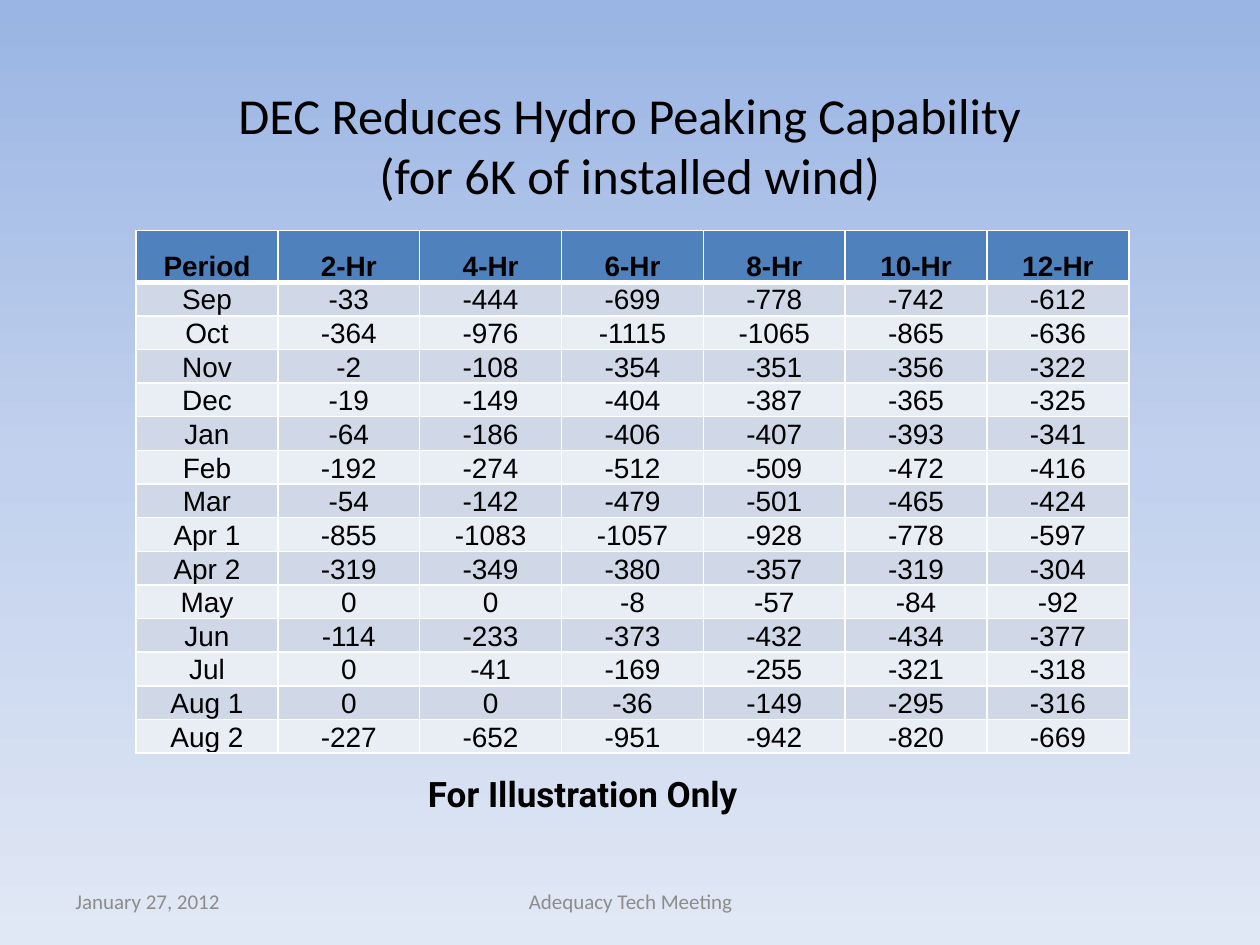
from copy import deepcopy

from lxml import etree
from pptx import Presentation
from pptx.dml.color import RGBColor
from pptx.enum.text import MSO_ANCHOR, PP_ALIGN
from pptx.oxml.ns import qn
from pptx.util import Inches, Pt

LEFT, CENTER = PP_ALIGN.LEFT, PP_ALIGN.CENTER
TOP, MIDDLE, BOTTOM = MSO_ANCHOR.TOP, MSO_ANCHOR.MIDDLE, MSO_ANCHOR.BOTTOM

BLACK = RGBColor(0x00, 0x00, 0x00)
WHITE = RGBColor(0xFF, 0xFF, 0xFF)
FOOTER_GRAY = RGBColor(0x8C, 0x8C, 0x8C)
HEADER_BLUE = RGBColor(0x4F, 0x81, 0xBD)
BANDS = (RGBColor(0xD0, 0xD8, 0xE8), RGBColor(0xE9, 0xED, 0xF4))
SKY = (RGBColor(0x9A, 0xB5, 0xE4), RGBColor(0xC2, 0xD1, 0xED), RGBColor(0xE1, 0xE8, 0xF5))

HEADER_HEIGHT = 0.41
HEADINGS = ("Period", "2-Hr", "4-Hr", "6-Hr", "8-Hr", "10-Hr", "12-Hr")
REDUCTIONS = (
    ("Sep", -33, -444, -699, -778, -742, -612),
    ("Oct", -364, -976, -1115, -1065, -865, -636),
    ("Nov", -2, -108, -354, -351, -356, -322),
    ("Dec", -19, -149, -404, -387, -365, -325),
    ("Jan", -64, -186, -406, -407, -393, -341),
    ("Feb", -192, -274, -512, -509, -472, -416),
    ("Mar", -54, -142, -479, -501, -465, -424),
    ("Apr 1", -855, -1083, -1057, -928, -778, -597),
    ("Apr 2", -319, -349, -380, -357, -319, -304),
    ("May", 0, 0, -8, -57, -84, -92),
    ("Jun", -114, -233, -373, -432, -434, -377),
    ("Jul", 0, -41, -169, -255, -321, -318),
    ("Aug 1", 0, 0, -36, -149, -295, -316),
    ("Aug 2", -227, -652, -951, -942, -820, -669),
)


def paint_background(slide):
    fill = slide.background.fill
    fill.gradient()
    fill.gradient_angle = 270
    first = fill.gradient_stops[0]._gs
    first.addnext(deepcopy(first))
    for stop, position, color in zip(fill.gradient_stops, (0, 0.5, 1), SKY):
        stop.position = position
        stop.color.rgb = color


def add_run(paragraph, text, font, size, color, bold=False):
    run = paragraph.add_run()
    run.text = text
    run.font.name = font
    run.font.size = Pt(size)
    run.font.bold = bold
    run.font.color.rgb = color


def add_text(slide, box, lines, font, size, color, align=CENTER, anchor=MIDDLE, bold=False):
    frame = slide.shapes.add_textbox(*map(Inches, box)).text_frame
    frame.word_wrap = True
    frame.vertical_anchor = anchor
    paragraph = frame.paragraphs[0]
    paragraph.alignment = align
    for index, line in enumerate(lines):
        if index:
            paragraph.add_line_break()
        add_run(paragraph, line, font, size, color, bold)


def set_borders(cell, bottom_width):
    """Draw white lines round the cell; they must come before its fill in the XML."""
    properties = cell._tc.get_or_add_tcPr()
    widths = {"a:lnL": 1, "a:lnR": 1, "a:lnT": 1, "a:lnB": bottom_width}
    for index, (tag, width) in enumerate(widths.items()):
        line = etree.Element(qn(tag), w=str(Pt(width)))
        solid = etree.SubElement(line, qn("a:solidFill"))
        etree.SubElement(solid, qn("a:srgbClr"), val=str(WHITE))
        properties.insert(index, line)


def fill_cell(cell, text, color, is_header):
    cell.margin_left = cell.margin_right = cell.margin_top = cell.margin_bottom = 0
    cell.vertical_anchor = BOTTOM
    cell.fill.solid()
    cell.fill.fore_color.rgb = color
    set_borders(cell, 3 if is_header else 1)
    paragraph = cell.text_frame.paragraphs[0]
    paragraph.alignment = CENTER
    add_run(paragraph, text, "Arial", 16, BLACK, is_header)


def add_reduction_table(slide, box):
    width, height = box[2:]
    rows = (HEADINGS, *REDUCTIONS)
    table = slide.shapes.add_table(len(rows), len(HEADINGS), *map(Inches, box)).table
    for column in table.columns:
        column.width = Inches(width / len(HEADINGS))
    body_height = (height - HEADER_HEIGHT) / len(REDUCTIONS)
    for row_index, values in enumerate(rows):
        is_header = row_index == 0
        table.rows[row_index].height = Inches(HEADER_HEIGHT if is_header else body_height)
        color = HEADER_BLUE if is_header else BANDS[(row_index - 1) % 2]
        for column_index, value in enumerate(values):
            fill_cell(table.cell(row_index, column_index), str(value), color, is_header)


def add_footer(slide, top, height):
    add_text(slide, (0.5, top, 2.33, height), ["January 27, 2012"],
             "Calibri", 12, FOOTER_GRAY, align=LEFT)
    add_text(slide, (3.42, top, 3.17, height), ["Adequacy Tech Meeting"],
             "Calibri", 12, FOOTER_GRAY)


def main():
    presentation = Presentation()
    presentation.slide_width = Inches(10)
    presentation.slide_height = Inches(7.5)
    slide = presentation.slides.add_slide(presentation.slide_layouts[6])
    paint_background(slide)
    add_text(slide, (0.75, 0.58, 8.5, 1.13),
             ["DEC Reduces Hydro Peaking Capability", "(for 6K of installed wind)"],
             "Calibri", 28.8, BLACK)
    add_reduction_table(slide, (1.08, 1.83, 7.88, 3.87))
    add_footer(slide, 6.95, 0.4)
    add_text(slide, (2, 6.08, 5.25, 0.44), ["For Illustration Only"],
             "Roboto", 20, BLACK, anchor=TOP, bold=True)
    presentation.save("out.pptx")


if __name__ == "__main__":
    main()
